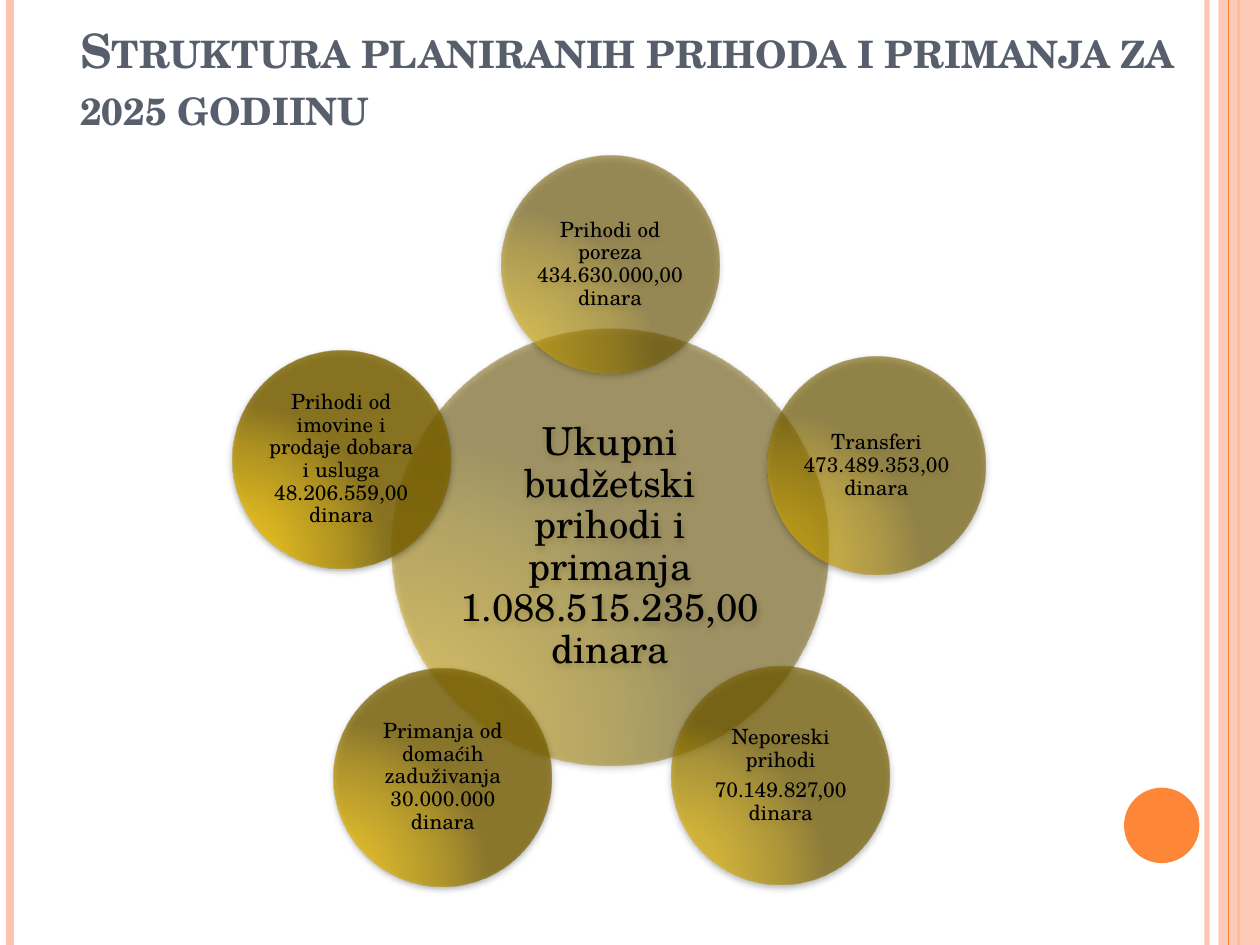
import dataclasses

import pptx
import pptx.dml.color
import pptx.enum.shapes
import pptx.enum.text
import pptx.oxml
import pptx.oxml.ns
import pptx.util

Cm = pptx.util.Cm
Pt = pptx.util.Pt
qn = pptx.oxml.ns.qn
OVAL = pptx.enum.shapes.MSO_SHAPE.OVAL
NAMESPACE = 'xmlns:a="http://schemas.openxmlformats.org/drawingml/2006/main"'


@dataclasses.dataclass(frozen=True)
class Theme:
    """Colours, font and type sizes of the slide."""
    font: str = "TeX Gyre Schola"
    title: str = "575F6D"
    text: str = "000000"
    pale: str = "FEC3AE"
    accent: str = "FE8637"
    title_size: int = 27
    hub_size: int = 22
    satellite_size: int = 12


THEME = Theme()
GRADIENT_STOPS = (0, 30, 75, 100)
HUB = (["Ukupni budžetski prihodi i primanja 1.088.515.235,00 dinara"],
       ("D7AC00", "D0A600", "9C7D00", "735C00"), 50)
SATELLITES = [
    (0, -5.7, ["Prihodi od poreza 434.630.000,00 dinara"],
     ("DCB000", "D4AA00", "9F7F00", "765E00"), 56),
    (5.37, -1.64, ["Transferi 473.489.353,00 dinara"],
     ("E1B400", "D9AD00", "A38200", "786000"), 62),
    (3.44, 4.61, ["Neporeski prihodi", "70.149.827,00 dinara"],
     ("E5B700", "DDB100", "A68500", "7B6200"), 68),
    (-3.37, 4.64, ["Primanja od domaćih zaduživanja 30.000.000 dinara"],
     ("EABB00", "E2B400", "A98700", "7D6400"), 74),
    (-5.42, -1.77, ["Prihodi od imovine i prodaje dobara i usluga 48.206.559,00 dinara"],
     ("EEBF00", "E6B800", "AD8A00", "806600"), 80),
]


def rgb(value):
    """Return a colour object for a hex string."""
    return pptx.dml.color.RGBColor.from_string(value)


def set_opacity(shape, percent):
    """Make the first solid colour of a shape or line partly transparent."""
    colour = next(shape._element.spPr.iter(qn("a:srgbClr")))
    colour.append(pptx.oxml.parse_xml(f'<a:alpha {NAMESPACE} val="{percent * 1000}"/>'))


def add_plain_shape(slide, kind, left, top, width, height, colour):
    """Add a flat shape without outline."""
    shape = slide.shapes.add_shape(kind, Cm(left), Cm(top), Cm(width), Cm(height))
    shape.shadow.inherit = False
    shape.fill.solid()
    shape.fill.fore_color.rgb = rgb(colour)
    shape.line.fill.background()
    return shape


def add_stripe(slide, x, top, height, colour, weight):
    """Add a vertical line at x."""
    line = slide.shapes.add_connector(
        pptx.enum.shapes.MSO_CONNECTOR.STRAIGHT, Cm(x), Cm(top), Cm(x), Cm(top + height))
    line.line.color.rgb = rgb(colour)
    line.line.width = Pt(weight)
    line._element.spPr.append(pptx.oxml.parse_xml(f"<a:effectLst {NAMESPACE}/>"))
    return line


def add_frame(slide, left, top, width, height):
    """Draw the edge stripes, the side band and the round accent."""
    right = left + width
    set_opacity(add_stripe(slide, right - 1.07, top, height, THEME.pale, 3), 93)
    add_stripe(slide, left + 0.2, top, height, THEME.pale, 4.5)
    add_stripe(slide, right - 0.43, top, height, THEME.accent, 1.5)
    band = add_plain_shape(slide, pptx.enum.shapes.MSO_SHAPE.RECTANGLE,
                           right - 0.84, top, 0.84, height, THEME.pale)
    set_opacity(band, 87)
    add_stripe(slide, right - 0.63, top, height, THEME.accent, 0.75)
    add_plain_shape(slide, OVAL, right - 2.74, top + 15.88, 1.52, 1.52, THEME.accent)


def add_title(slide, left, top, width, height):
    """Place the small-caps title at the bottom of its box."""
    box = slide.shapes.add_textbox(Cm(left), Cm(top), Cm(width), Cm(height))
    frame = box.text_frame
    frame.word_wrap = True
    frame.vertical_anchor = pptx.enum.text.MSO_ANCHOR.BOTTOM
    paragraph = frame.paragraphs[0]
    run = paragraph.add_run()
    run.text = "Struktura planiranih prihoda i primanja za 2025 godiinu"
    run.font.name = THEME.font
    run.font.size = Pt(THEME.title_size)
    run.font.bold = True
    run.font.color.rgb = rgb(THEME.title)
    run.font._element.set("cap", "small")


def set_glow_gradient(shape, colours, opacity):
    """Give a shape its radial gradient and soft shadow."""
    stops = "".join(
        f'<a:gs pos="{position * 1000}"><a:srgbClr val="{colour}">'
        f'<a:alpha val="{opacity * 1000}"/></a:srgbClr></a:gs>'
        for position, colour in zip(GRADIENT_STOPS, colours))
    gradient = pptx.oxml.parse_xml(
        f'<a:gradFill {NAMESPACE} rotWithShape="1"><a:gsLst>{stops}</a:gsLst>'
        '<a:path path="circle"><a:fillToRect l="5000" t="100000" r="120000" b="10000"/>'
        '</a:path></a:gradFill>')
    properties = shape._element.spPr
    properties.replace(properties.find(qn("a:solidFill")), gradient)
    properties.find(qn("a:effectLst")).append(pptx.oxml.parse_xml(
        f'<a:outerShdw {NAMESPACE} blurRad="{Pt(4)}" dist="{Pt(1.6)}" dir="5400000" '
        'rotWithShape="0"><a:srgbClr val="000000"><a:alpha val="42000"/></a:srgbClr>'
        '</a:outerShdw>'))


def add_bubble(slide, center_x, center_y, diameter, lines, colours, opacity, size, inset):
    """Add a translucent circle with centred text."""
    shape = add_plain_shape(slide, OVAL, center_x - diameter / 2, center_y - diameter / 2,
                            diameter, diameter, colours[0])
    set_glow_gradient(shape, colours, opacity)
    frame = shape.text_frame
    frame.word_wrap = True
    frame.vertical_anchor = pptx.enum.text.MSO_ANCHOR.MIDDLE
    frame.margin_left = frame.margin_right = Cm(inset)
    frame.margin_top = frame.margin_bottom = Cm(inset)
    frame.text = "\n".join(lines)
    for paragraph in frame.paragraphs:
        paragraph.alignment = pptx.enum.text.PP_ALIGN.CENTER
        paragraph.line_spacing = 0.9
        paragraph.space_after = Pt(size * 0.35)
        paragraph.font.name = THEME.font
        paragraph.font.size = Pt(size)
        paragraph.font.color.rgb = rgb(THEME.text)


def add_revenue_diagram(slide, left, top, width, height):
    """Place the total in the hub and the revenue kinds around it."""
    center_x, center_y = left + width / 2, top + height * 0.54
    add_bubble(slide, center_x, center_y, 8.79, *HUB, THEME.hub_size, 0.08)
    for offset_x, offset_y, lines, colours, opacity in SATELLITES:
        add_bubble(slide, center_x + offset_x, center_y + offset_y, 4.39,
                   lines, colours, opacity, THEME.satellite_size, 0.05)


def main():
    """Build and save the presentation."""
    presentation = pptx.Presentation()
    presentation.slide_width, presentation.slide_height = Cm(25.4), Cm(19.05)
    slide = presentation.slides.add_slide(presentation.slide_layouts[6])
    add_frame(slide, 0, 0, 25.4, 19.05)
    add_title(slide, 1.37, 0.69, 22.86, 2.16)
    add_revenue_diagram(slide, 4.68, 3.09, 15.24, 14.7)
    presentation.save("out.pptx")


if __name__ == "__main__":
    main()
